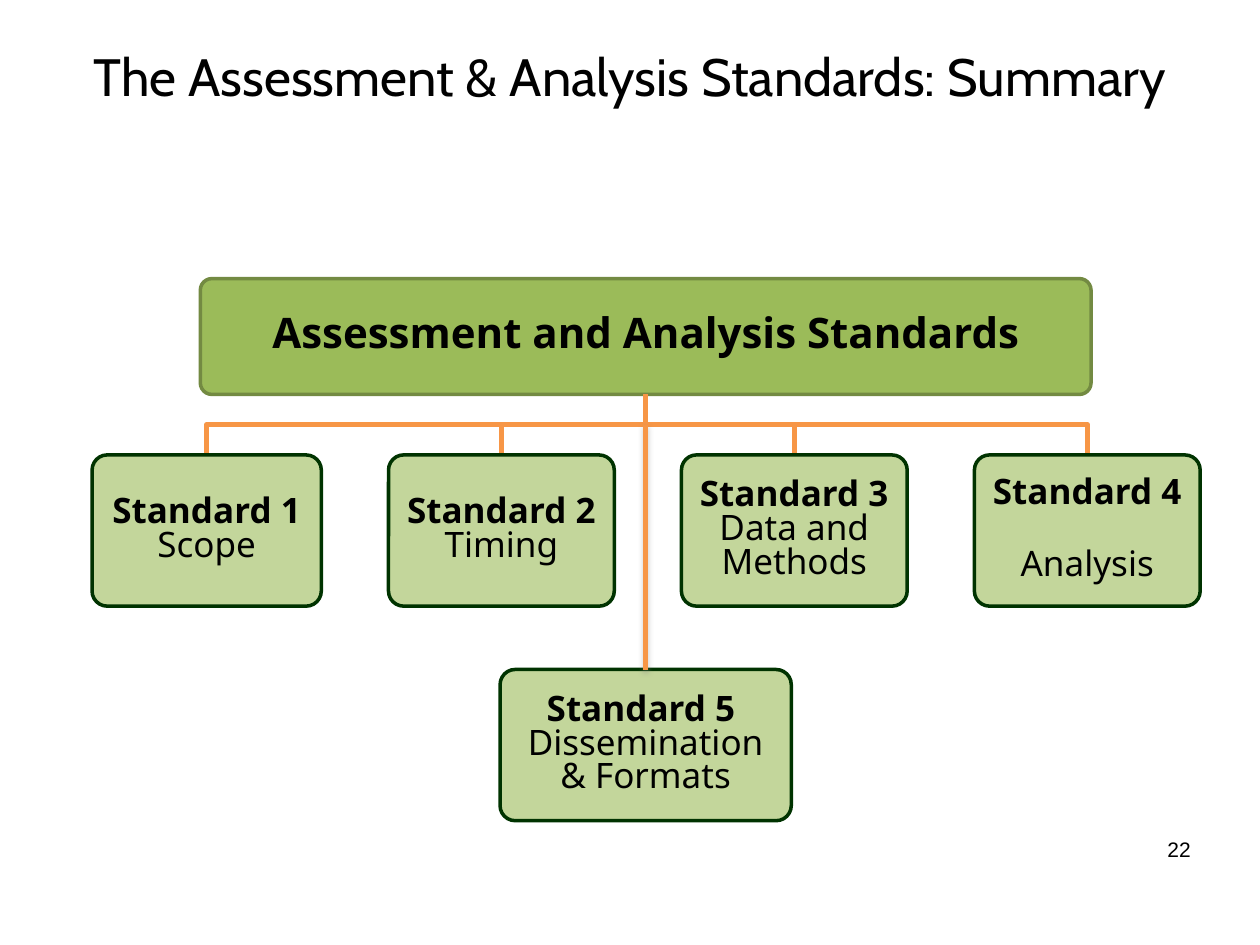
from lxml import etree
from pptx import Presentation
from pptx import util as u
from pptx.dml.color import RGBColor
from pptx.enum import shapes, text
from pptx.oxml.ns import qn

COLOURS = {
    "black": "000000",
    "bar": "9BBB59",
    "bar_edge": "738A42",
    "standard": "C3D69B",
    "standard_edge": "003300",
    "branch": "F79646",
    "shadow": "808080",
}


class StandardsChart:
    def __init__(self, slide):
        self.slide = slide
        self.font = "Noto Sans"
        self.line_spacing = 0.8

    def colour(self, name):
        return RGBColor.from_string(COLOURS[name])

    def outline(self, shape, name, width):
        shape.line.color.rgb = self.colour(name)
        shape.line.width = u.Pt(width)

    def format_runs(self, paragraph, font, size, bold=False):
        for run in paragraph.runs:
            run.font.name = font
            run.font.size = u.Pt(size)
            run.font.bold = bold
            run.font.color.rgb = self.colour("black")

    def label(self, left, top, width, height, words, font, size, align):
        box = self.slide.shapes.add_textbox(*map(u.Pt, (left, top, width, height)))
        box.text_frame.word_wrap = True
        box.text_frame.text = words
        paragraph = box.text_frame.paragraphs[0]
        paragraph.alignment = align
        self.format_runs(paragraph, font, size)

    def box(self, left, top, width, height, words, size, fill, edge, gap=0):
        shape = self.slide.shapes.add_shape(
            shapes.MSO_SHAPE.ROUNDED_RECTANGLE, *map(u.Pt, (left, top, width, height))
        )
        shape.adjustments[0] = 0.1
        shape.shadow.inherit = False
        shape.fill.solid()
        shape.fill.fore_color.rgb = self.colour(fill)
        self.outline(shape, edge, 2)
        frame = shape.text_frame
        frame.word_wrap = True
        frame.vertical_anchor = text.MSO_ANCHOR.MIDDLE
        frame.margin_left = frame.margin_right = u.Pt(8)
        frame.margin_top = frame.margin_bottom = u.Pt(8)
        frame.text = words
        for index, paragraph in enumerate(frame.paragraphs):
            paragraph.alignment = text.PP_ALIGN.CENTER
            paragraph.line_spacing = self.line_spacing
            paragraph.space_before = u.Pt(gap if index else 0)
            self.format_runs(paragraph, self.font, size, bold=index == 0)
        return shape

    def branch(self, start_x, start_y, end_x, end_y):
        middle = (start_y + end_y) / 2
        builder = self.slide.shapes.build_freeform(u.Pt(start_x), u.Pt(start_y))
        corners = [(start_x, middle), (end_x, middle), (end_x, end_y)]
        builder.add_line_segments([(u.Pt(x), u.Pt(y)) for x, y in corners], close=False)
        shape = builder.convert_to_shape()
        shape.shadow.inherit = False
        shape.fill.background()
        self.outline(shape, "branch", 3)

    def stem(self, x, top, target):
        line = self.slide.shapes.add_connector(
            shapes.MSO_CONNECTOR.STRAIGHT, u.Pt(x), u.Pt(top), u.Pt(x), target.top
        )
        line.end_connect(target, 0)
        self.outline(line, "branch", 3)
        effects = etree.SubElement(line._element.spPr, qn("a:effectLst"))
        shadow = etree.SubElement(
            effects, qn("a:outerShdw"), blurRad=str(u.Pt(3.1)), dist=str(u.Pt(1.6)), dir="5400000"
        )
        tint = etree.SubElement(shadow, qn("a:srgbClr"), val=COLOURS["shadow"])
        etree.SubElement(tint, qn("a:alpha"), val="38000")


def main():
    presentation = Presentation()
    presentation.slide_width = u.Pt(720)
    presentation.slide_height = u.Pt(540)
    slide = presentation.slides.add_slide(presentation.slide_layouts[6])
    chart = StandardsChart(slide)

    centre, bar_bottom, row_top, height = 369, 225.4, 260, 86.4
    chart.box(114.5, 159.2, 509, 66.2, "Assessment and Analysis Standards", 24, "bar", "bar_edge")

    standards = [
        (52.6, 131, "Standard 1\nScope", 0),
        (222, 129, "Standard 2\nTiming", 0),
        (389.4, 129, "Standard 3\nData and Methods", 0),
        (556.8, 129, "Standard 4\nAnalysis", 21.8),
    ]
    for left, width, words, gap in standards:
        chart.branch(centre, bar_bottom, left + width / 2, row_top)
        chart.box(left, row_top, width, height, words, 20, "standard", "standard_edge", gap)

    chart.label(660, 474.5, 38, 21.6, "22", "Arial", 12, text.PP_ALIGN.LEFT)
    chart.label(36, 21.6, 648, 80.6, "The Assessment & Analysis Standards: Summary",
                "Cabin", 30, text.PP_ALIGN.CENTER)

    width = 166.4
    dissemination = chart.box(centre - width / 2, 382.6, width, height,
                              "Standard 5 \nDissemination & Formats", 20, "standard", "standard_edge")
    chart.stem(centre, (bar_bottom + row_top) / 2, dissemination)

    presentation.save("out.pptx")


if __name__ == "__main__":
    main()
